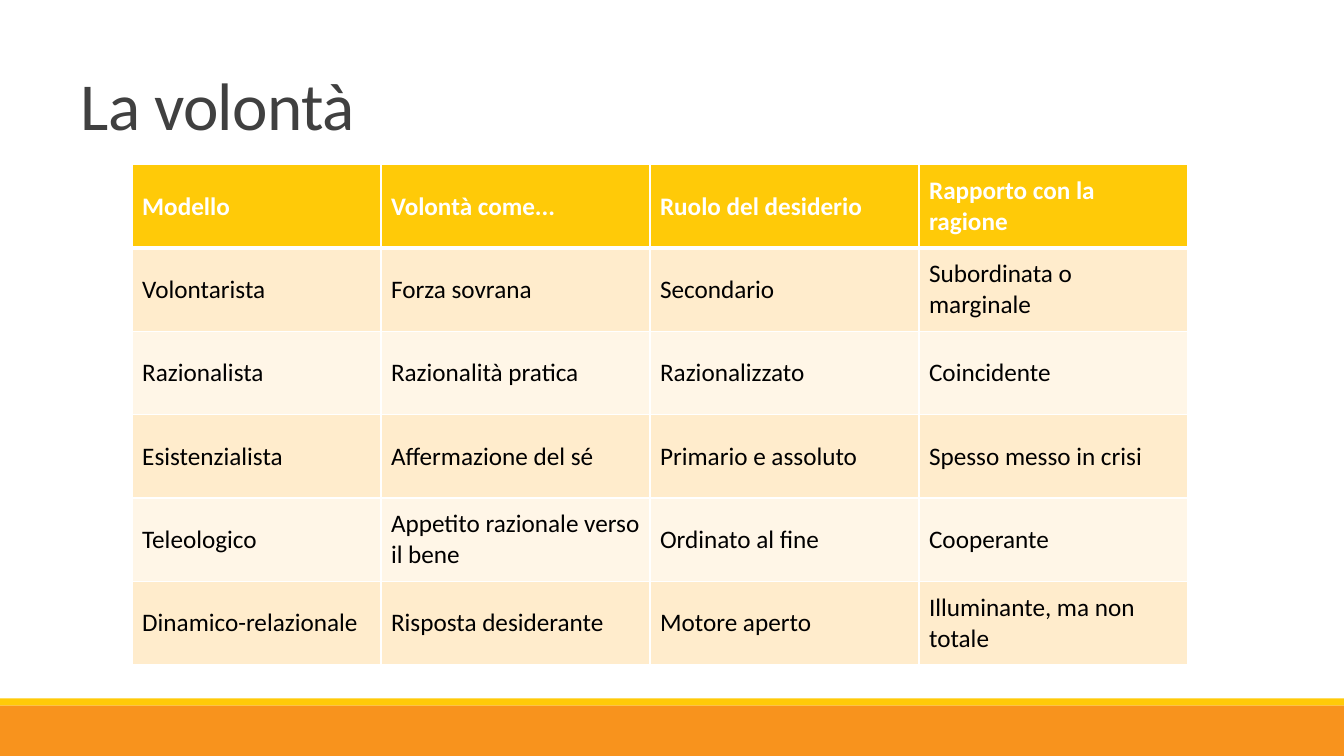
from lxml import etree
from pptx import Presentation
from pptx.dml.color import RGBColor
from pptx.enum.shapes import MSO_SHAPE
from pptx.enum.text import MSO_ANCHOR, MSO_AUTO_SIZE, PP_ALIGN
from pptx.oxml.ns import qn
from pptx.util import Cm, Pt

RECTANGLE = MSO_SHAPE.RECTANGLE
TOP, MIDDLE = MSO_ANCHOR.TOP, MSO_ANCHOR.MIDDLE
LEFT = PP_ALIGN.LEFT
NO_AUTOFIT = MSO_AUTO_SIZE.NONE
TITLE_ONLY = 5

COLOURS = {
    "title": "404040",
    "white": "FFFFFF",
    "black": "000000",
    "yellow": "FFCA08",
    "orange": "F8931D",
    "dark band": "FFECCC",
    "light band": "FFF6E7",
}
FONT = "Calibri"
SLIDE_WIDTH, SLIDE_HEIGHT = 33.87, 19.05
COLUMN_WIDTHS = [6.27, 6.78, 6.78, 6.78]
ROW_HEIGHT = 2.1
MODELS = [
    ["Modello", "Volontà come...", "Ruolo del desiderio", "Rapporto con la ragione"],
    ["Volontarista", "Forza sovrana", "Secondario", "Subordinata o marginale"],
    ["Razionalista", "Razionalità pratica", "Razionalizzato", "Coincidente"],
    ["Esistenzialista", "Affermazione del sé", "Primario e assoluto", "Spesso messo in crisi"],
    ["Teleologico", "Appetito razionale verso il bene", "Ordinato al fine", "Cooperante"],
    ["Dinamico-relazionale", "Risposta desiderante", "Motore aperto", "Illuminante, ma non totale"],
]


def write_text(frame, text, size=18, colour="black", bold=False, line_spacing=1.0, tracking=0):
    """Fill a text frame with one formatted paragraph; tracking is in points."""
    para = frame.paragraphs[0]
    para.alignment = LEFT
    para.line_spacing = line_spacing
    span = para.add_run()
    span.text = text
    span.font.name = FONT
    span.font.size = Pt(size)
    span.font.bold = bold
    span.font.color.rgb = RGBColor.from_string(COLOURS[colour])
    if tracking:
        span.font._element.set("spc", str(round(tracking * 100)))


def add_cell_border(cell, side, width):
    properties = cell._tc.get_or_add_tcPr()
    line = etree.SubElement(properties, qn(f"a:ln{side}"), w=str(Pt(width)))
    fill = etree.SubElement(line, qn("a:solidFill"))
    etree.SubElement(fill, qn("a:srgbClr"), val=COLOURS["white"])


deck = Presentation()
deck.slide_width, deck.slide_height = Cm(SLIDE_WIDTH), Cm(SLIDE_HEIGHT)
page = deck.slides.add_slide(deck.slide_layouts[TITLE_ONLY])

# Title
title = page.shapes.title
title.left, title.top, title.width, title.height = Cm(1.78), Cm(1.78), Cm(9.5), Cm(14.53)
title.text_frame.word_wrap = True
title.text_frame.auto_size = NO_AUTOFIT
title.text_frame.vertical_anchor = TOP
write_text(title.text_frame, "La volontà", size=48, colour="title", line_spacing=0.85, tracking=-0.5)

# Footer bands
for top, height, colour in [(17.6, 0.18, "yellow"), (17.78, 1.27, "orange")]:
    band = page.shapes.add_shape(RECTANGLE, 0, Cm(top), Cm(SLIDE_WIDTH), Cm(height))
    band.shadow.inherit = False
    band.fill.solid()
    band.fill.fore_color.rgb = RGBColor.from_string(COLOURS[colour])
    band.line.fill.background()

# Table of the models of the will
table = page.shapes.add_table(
    len(MODELS), len(COLUMN_WIDTHS), Cm(3.33), Cm(4.15),
    Cm(sum(COLUMN_WIDTHS)), Cm(ROW_HEIGHT * len(MODELS)),
).table
for column, width in zip(table.columns, COLUMN_WIDTHS):
    column.width = Cm(width)

for row_number, model in enumerate(MODELS):
    table.rows[row_number].height = Cm(ROW_HEIGHT)
    is_header = row_number == 0
    if is_header:
        background = "yellow"
    else:
        background = "dark band" if row_number % 2 else "light band"
    border_widths = {
        "L": 1,
        "R": 1,
        "T": 3 if row_number == 1 else 1,
        "B": 3 if is_header else 1,
    }
    for column_number, text in enumerate(model):
        cell = table.cell(row_number, column_number)
        cell.vertical_anchor = MIDDLE
        for side, width in border_widths.items():
            add_cell_border(cell, side, width)
        cell.fill.solid()
        cell.fill.fore_color.rgb = RGBColor.from_string(COLOURS[background])
        write_text(cell.text_frame, text, colour="white" if is_header else "black", bold=is_header)

deck.save("out.pptx")
